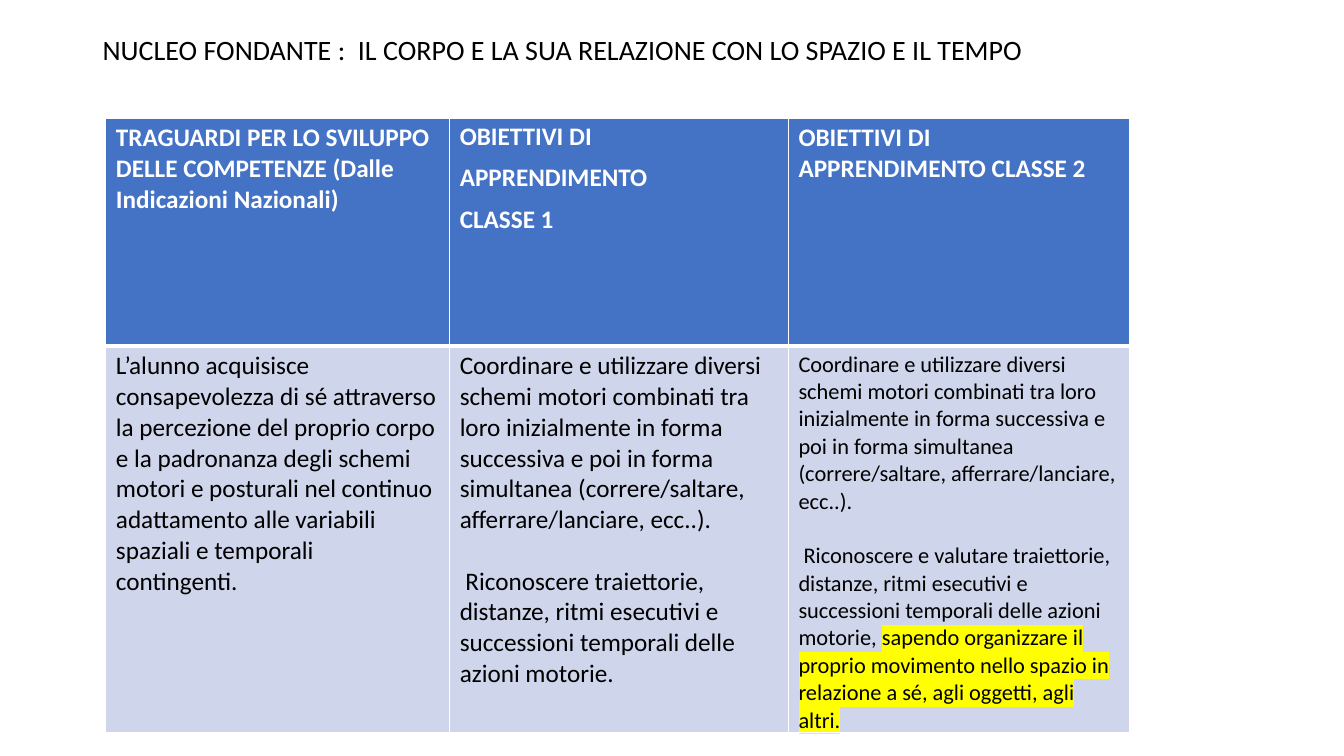
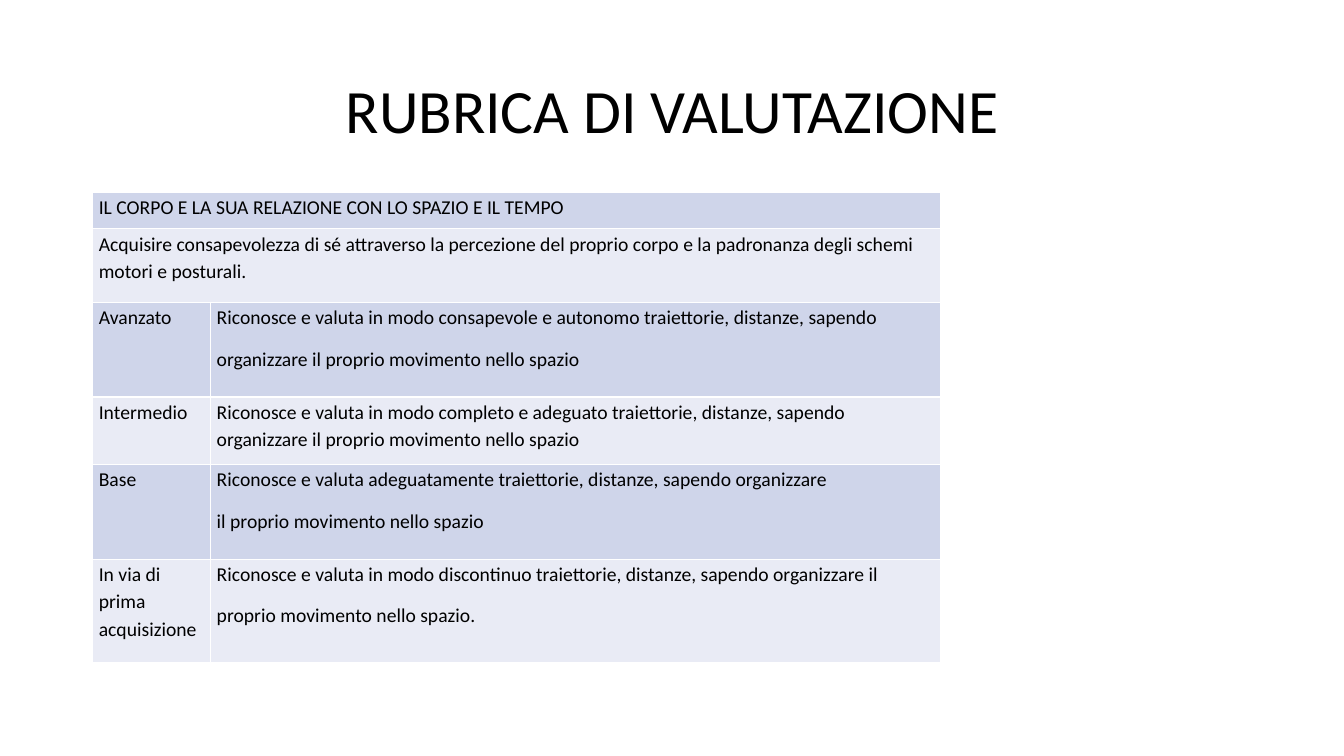
"""Build two slides on the body in space and time: learning goals and assessment rubric."""
from lxml.etree import SubElement
from pptx import Presentation
from pptx.dml.color import RGBColor
from pptx.enum.text import MSO_ANCHOR as Anchor, PP_ALIGN as Align
from pptx.oxml.ns import qn
from pptx.util import Inches, Pt

BLACK = RGBColor(0x00, 0x00, 0x00)
WHITE = RGBColor(0xFF, 0xFF, 0xFF)
HEADER_BLUE = RGBColor(0x44, 0x72, 0xC4)
BAND_DARK = RGBColor(0xCF, 0xD5, 0xEA)
BAND_LIGHT = RGBColor(0xE9, 0xEB, 0xF5)
YELLOW = RGBColor(0xFF, 0xFF, 0x00)
FONT = "Calibri"

TITLE_FORMAT = {"line_spacing": 0.9}
STACKED_FORMAT = {"line_spacing": 0.9, "space_before": Pt(10)}
RUBRIC_FORMAT = {"line_spacing": 1.15, "space_after": Pt(10)}
RUBRIC_MARGINS = {
    "margin_left": Inches(0.06), "margin_right": Inches(0.06),
    "margin_top": 0, "margin_bottom": 0,
}

GOAL_HEADERS = [
    (["TRAGUARDI PER LO SVILUPPO DELLE COMPETENZE (Dalle Indicazioni Nazionali)"], {}),
    (["OBIETTIVI DI", "APPRENDIMENTO", "CLASSE 1"], STACKED_FORMAT),
    (["OBIETTIVI DI APPRENDIMENTO CLASSE 2"], {}),
]
COORDINATION = (
    "Coordinare e utilizzare diversi schemi motori combinati tra loro inizialmente in "
    "forma successiva e poi in forma simultanea (correre/saltare, afferrare/lanciare, ecc..)."
)
GOALS = [
    (["L’alunno acquisisce consapevolezza di sé attraverso la percezione del proprio corpo "
      "e la padronanza degli schemi motori e posturali nel continuo adattamento alle "
      "variabili spaziali e temporali contingenti."], 18),
    ([COORDINATION,
      " Riconoscere traiettorie, distanze, ritmi esecutivi e successioni temporali delle "
      "azioni motorie."], 18),
    ([COORDINATION,
      (" Riconoscere e valutare traiettorie, distanze, ritmi esecutivi e successioni "
       "temporali delle azioni motorie, ",
       "sapendo organizzare il proprio movimento nello spazio in relazione a sé, agli "
       "oggetti, agli altri.")], 16),
]
RUBRIC = [
    [["IL CORPO E LA SUA RELAZIONE CON LO SPAZIO E IL TEMPO"]],
    [["Acquisire consapevolezza di sé attraverso la percezione del proprio corpo e la "
      "padronanza degli schemi motori e posturali."]],
    [["Avanzato"],
     ["Riconosce e valuta in modo consapevole e autonomo traiettorie, distanze, sapendo",
      "organizzare il proprio movimento nello spazio"]],
    [["Intermedio"],
     ["Riconosce e valuta in modo completo e adeguato traiettorie, distanze, sapendo "
      "organizzare il proprio movimento nello spazio"]],
    [["Base"],
     ["Riconosce e valuta adeguatamente traiettorie, distanze, sapendo organizzare",
      "il proprio movimento nello spazio"]],
    [["In via di prima acquisizione"],
     ["Riconosce e valuta in modo discontinuo traiettorie, distanze, sapendo organizzare il",
      "proprio movimento nello spazio."]],
]


def apply_format(target, values):
    """Set each named attribute on the target."""
    for name, value in values.items():
        setattr(target, name, value)


def highlight(run, color):
    """Mark a run with a background colour."""
    properties = run.font._element
    marker = SubElement(properties, qn("a:highlight"))
    SubElement(marker, qn("a:srgbClr"), val=str(color))
    properties.find(qn("a:latin")).addprevious(marker)


def write(frame, paragraphs, size, color=BLACK, bold=False, layout=None):
    """Fill a text frame; the second part of a paragraph pair is highlighted."""
    for index, content in enumerate(paragraphs):
        paragraph = frame.add_paragraph() if index else frame.paragraphs[0]
        apply_format(paragraph, layout or {})
        if not index:
            paragraph.space_before = Pt(0)
        parts = (content,) if isinstance(content, str) else content
        for position, part in enumerate(parts):
            run = paragraph.add_run()
            run.text = part
            apply_format(run.font, {"size": Pt(size), "bold": bold, "name": FONT})
            run.font.color.rgb = color
            if position:
                highlight(run, YELLOW)


def add_title(slide, text, top, height, size, align):
    """Add a vertically centred slide title."""
    title = slide.shapes.add_textbox(Inches(0.92), Inches(top), Inches(11.5), Inches(height))
    apply_format(title.text_frame, {"word_wrap": True, "vertical_anchor": Anchor.MIDDLE})
    write(title.text_frame, [text], size, layout={**TITLE_FORMAT, "alignment": align})


def style_cell(cell, fill, top=1, bottom=1):
    """Give a cell white borders and a solid fill."""
    properties = cell._tc.get_or_add_tcPr()
    for side, width in {"L": 1, "R": 1, "T": top, "B": bottom}.items():
        border = SubElement(properties, qn(f"a:ln{side}"), w=str(Pt(width)))
        paint = SubElement(border, qn("a:solidFill"))
        SubElement(paint, qn("a:srgbClr"), val=str(WHITE))
    cell.fill.solid()
    cell.fill.fore_color.rgb = fill


def add_grid(slide, left, top, widths, heights):
    """Add a plain table with the given column widths and row heights."""
    grid = slide.shapes.add_table(
        len(heights), len(widths), Inches(left), Inches(top),
        Inches(sum(widths)), Inches(sum(heights)),
    ).table
    apply_format(grid, {"first_row": False, "horz_banding": False})
    for column, width in zip(grid.columns, widths):
        column.width = Inches(width)
    for row, height in zip(grid.rows, heights):
        row.height = Inches(height)
    return grid


def build_goals(slide):
    """Build the slide of goals by class."""
    add_title(slide, "NUCLEO FONDANTE :  IL CORPO E LA SUA RELAZIONE CON LO SPAZIO E IL TEMPO",
              0.26, 0.5, 20, Align.LEFT)
    grid = add_grid(slide, 1.05, 1.17, [3.41, 3.36, 3.38], [2.26, 3.75])
    for column, (paragraphs, layout) in enumerate(GOAL_HEADERS):
        cell = grid.cell(0, column)
        style_cell(cell, HEADER_BLUE, bottom=3)
        write(cell.text_frame, paragraphs, 18, WHITE, True, layout)
    for column, (paragraphs, size) in enumerate(GOALS):
        cell = grid.cell(1, column)
        style_cell(cell, BAND_DARK, top=3)
        write(cell.text_frame, paragraphs, size, layout={"space_before": Pt(size * 1.22)})


def build_rubric(slide):
    """Build the slide of assessment levels."""
    add_title(slide, "RUBRICA DI VALUTAZIONE", 0.4, 1.45, 44, Align.CENTER)
    grid = add_grid(slide, 0.92, 1.91, [1.17, 7.24], [0.36, 0.73, 0.94, 0.67, 0.94, 1.02])
    for row, level in enumerate(RUBRIC):
        for column in range(2):
            style_cell(grid.cell(row, column), BAND_LIGHT if row % 2 else BAND_DARK)
        if len(level) == 1:
            grid.cell(row, 0).merge(grid.cell(row, 1))
        for column, paragraphs in enumerate(level):
            cell = grid.cell(row, column)
            apply_format(cell, RUBRIC_MARGINS)
            write(cell.text_frame, paragraphs, 14, layout=RUBRIC_FORMAT)


def main():
    """Create and save the presentation."""
    deck = Presentation()
    apply_format(deck, {"slide_width": Inches(13.33), "slide_height": Inches(7.5)})
    for build in (build_goals, build_rubric):
        build(deck.slides.add_slide(deck.slide_layouts[6]))
    deck.save("out.pptx")


if __name__ == "__main__":
    main()
